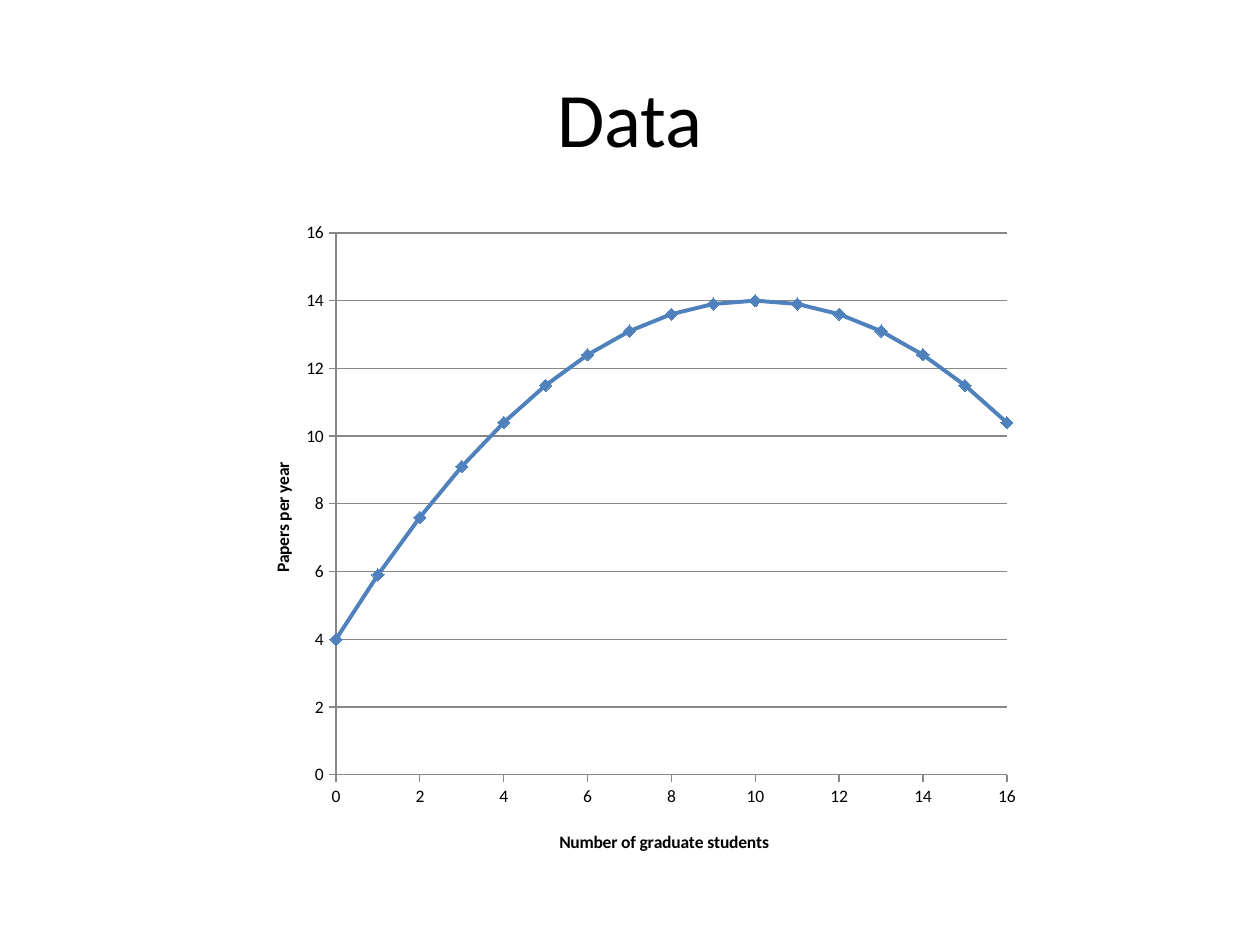
from pptx import Presentation
from pptx.chart.data import XyChartData
from pptx.dml.color import RGBColor
from pptx.enum.chart import XL_CHART_TYPE as Kind, XL_MARKER_STYLE as Mark
from pptx.enum.chart import XL_TICK_MARK as Tick
from pptx.enum.text import MSO_ANCHOR as Anchor, PP_ALIGN as Align
from pptx.oxml import parse_xml
from pptx.oxml.ns import nsdecls, qn
from pptx.util import Pt

TITLE = "Data"
PAPERS = [4, 5.9, 7.6, 9.1, 10.4, 11.5, 12.4, 13.1, 13.6,
          13.9, 14, 13.9, 13.6, 13.1, 12.4, 11.5, 10.4]
X_NAME, Y_NAME = "Number of graduate students", "Papers per year"

SCALE = 914400 / 126
PAGE = (1260, 945)
HEAD = (63, 38, 1134, 158)
CHART = (237, 210, 795, 662)
PLOT = (336, 233, 671, 542)
X_SPOT, Y_SPOT = (556, 827), (268, 459)

FACE, BLACK, GREY, BLUE = "Calibri", "000000", "878787", "4F81BD"
AXIS = {"minimum_scale": 0, "maximum_scale": 16, "major_unit": 2,
        "major_tick_mark": Tick.OUTSIDE, "minor_tick_mark": Tick.NONE}


def emu(*sizes):
    return [round(size * SCALE) for size in sizes]


def rgb(code):
    return RGBColor.from_string(code)


def style(font, size, bold=False):
    for key, value in {"name": FACE, "size": Pt(size), "bold": bold}.items():
        setattr(font, key, value)
    font.color.rgb = rgb(BLACK)


def stroke(line, code, width):
    line.color.rgb = rgb(code)
    line.width = Pt(width)


def layout(box, inner=False):
    """Return a manual chart layout for a box given in page px."""
    left, top, wide, high = CHART
    parts = {"x": (box[0] - left) / wide, "y": (box[1] - top) / high}
    if inner:
        parts.update(w=box[2] / wide, h=box[3] / high)
    tags = '<c:layoutTarget val="inner"/>' if inner else ""
    tags += "".join(f'<c:{key}Mode val="edge"/>' for key in "xy")
    tags += "".join(f'<c:{key} val="{part:.4f}"/>' for key, part in parts.items())
    return parse_xml(f'<c:layout {nsdecls("c")}><c:manualLayout>{tags}'
                     "</c:manualLayout></c:layout>")


def clear(node):
    for old in node.findall(qn("c:layout")):
        node.remove(old)


def set_axis(axis, name, spot, grid):
    for key, value in AXIS.items():
        setattr(axis, key, value)
    axis.has_major_gridlines = grid
    if grid:
        stroke(axis.major_gridlines.format.line, GREY, 0.75)
    stroke(axis.format.line, GREY, 0.75)
    style(axis.tick_labels.font, 10)
    axis.tick_labels.number_format = "General"
    axis.tick_labels.number_format_is_linked = False
    frame = axis.axis_title.text_frame
    frame.text = name
    style(frame.paragraphs[0].runs[0].font, 10, True)
    node = frame._txBody.getparent().getparent()
    clear(node)
    node.find(qn("c:tx")).addnext(layout(spot))


def add_title(slide):
    frame = slide.shapes.add_textbox(*emu(*HEAD)).text_frame
    frame.word_wrap = True
    frame.vertical_anchor = Anchor.MIDDLE
    para = frame.paragraphs[0]
    para.alignment = Align.CENTER
    run = para.add_run()
    run.text = TITLE
    style(run.font, 44)


def add_curve(slide):
    data = XyChartData()
    points = data.add_series("Series 1")
    for count, papers in enumerate(PAPERS):
        points.add_data_point(count, papers)
    chart = slide.shapes.add_chart(Kind.XY_SCATTER_SMOOTH, *emu(*CHART), data).chart
    chart.has_title = chart.has_legend = False
    style(chart.font, 10)
    set_axis(chart.category_axis, X_NAME, X_SPOT, False)
    set_axis(chart.value_axis, Y_NAME, Y_SPOT, True)

    plot = chart.plots[0]
    plot.vary_by_categories = False
    curve = plot.series[0]
    curve.smooth = True
    stroke(curve.format.line, BLUE, 2.25)
    curve.marker.style, curve.marker.size = Mark.DIAMOND, 7
    curve.marker.format.fill.solid()
    curve.marker.format.fill.fore_color.rgb = rgb(BLUE)
    stroke(curve.marker.format.line, BLUE, 0.75)

    area = chart.element.find(".//" + qn("c:plotArea"))
    clear(area)
    area.insert(0, layout(PLOT, True))


def main():
    deck = Presentation()
    deck.slide_width, deck.slide_height = emu(*PAGE)
    slide = deck.slides.add_slide(deck.slide_layouts[6])
    add_title(slide)
    add_curve(slide)
    deck.save("out.pptx")


if __name__ == "__main__":
    main()
